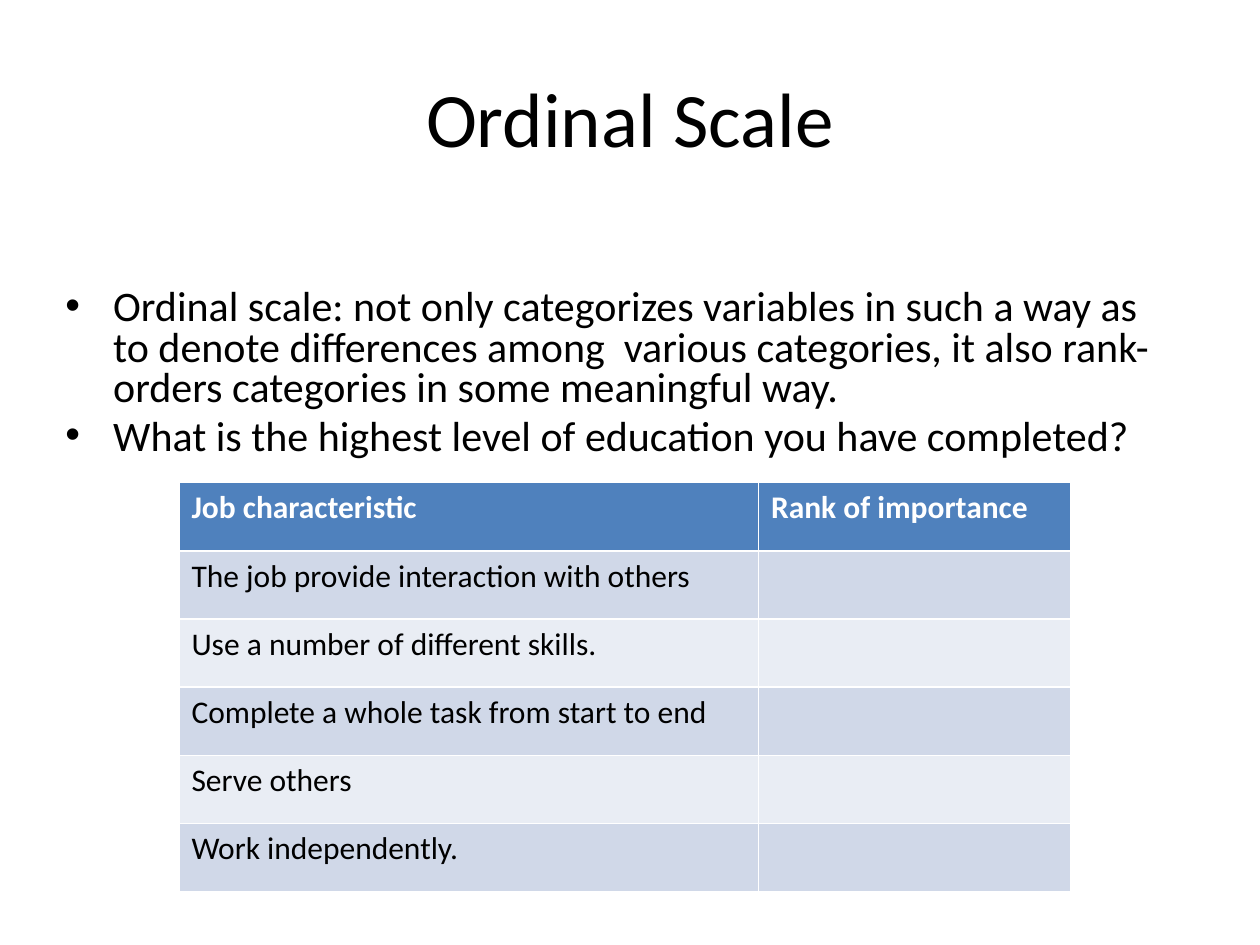
from lxml.etree import SubElement
from pptx import Presentation
from pptx.dml.color import RGBColor
from pptx.enum.text import MSO_ANCHOR, PP_ALIGN
from pptx.oxml.ns import qn
from pptx.util import Inches, Pt

BLACK = RGBColor(0x00, 0x00, 0x00)
WHITE = RGBColor(0xFF, 0xFF, 0xFF)
HEADER_BLUE = RGBColor(0x4F, 0x81, 0xBD)
BAND_DARK = RGBColor(0xD0, 0xD8, 0xE8)
BAND_LIGHT = RGBColor(0xE9, 0xED, 0xF4)

BULLETS = [
    "Ordinal scale: not only categorizes variables in such a way as to denote "
    "differences among  various categories, it also rank-orders categories in "
    "some meaningful way.",
    "What is the highest level of education you have completed?",
]
ROWS = [
    ("Job characteristic", "Rank of importance"),
    ("The job provide interaction with others", ""),
    ("Use a number of different skills.", ""),
    ("Complete a whole task from start to end", ""),
    ("Serve others", ""),
    ("Work independently.", ""),
]
COLUMN_WIDTHS = [4.6, 2.48]


def format_font(font, size, color, bold=False):
    for name, value in {"name": "Calibri", "size": Pt(size), "bold": bold}.items():
        setattr(font, name, value)
    font.color.rgb = color


def add_text(slide, left, top, width, height, anchor):
    box = slide.shapes.add_textbox(Inches(left), Inches(top), Inches(width), Inches(height))
    for name, value in {"word_wrap": True, "vertical_anchor": anchor}.items():
        setattr(box.text_frame, name, value)
    return box.text_frame


presentation = Presentation()
presentation.slide_width = Inches(10)
presentation.slide_height = Inches(7.5)
slide = presentation.slides.add_slide(presentation.slide_layouts[6])

title = add_text(slide, 0.5, 0.3, 9, 1.25, MSO_ANCHOR.MIDDLE)
title.text = "Ordinal Scale"
title.paragraphs[0].alignment = PP_ALIGN.CENTER
format_font(title.paragraphs[0].runs[0].font, 44, BLACK)

body = add_text(slide, 0.42, 2.25, 9, 4.95, MSO_ANCHOR.TOP)
body.text = "\n".join(BULLETS)
for paragraph in body.paragraphs:
    for name, value in {"line_spacing": 0.8, "space_before": Pt(4.8)}.items():
        setattr(paragraph, name, value)
    format_font(paragraph.runs[0].font, 24, BLACK)
    properties = paragraph._p.get_or_add_pPr()
    properties.set("marL", str(Inches(0.38)))
    properties.set("indent", str(Inches(-0.38)))
    SubElement(properties, qn("a:buFont"), typeface="Arial")
    SubElement(properties, qn("a:buChar"), char="•")

table = slide.shapes.add_table(
    len(ROWS), len(COLUMN_WIDTHS), Inches(1.42), Inches(3.83), Inches(7.08), Inches(3.25)
).table
for column, width in zip(table.columns, COLUMN_WIDTHS):
    column.width = Inches(width)

for row_index, row in enumerate(ROWS):
    is_header = row_index == 0
    band = BAND_DARK if row_index % 2 else BAND_LIGHT
    for column_index, text in enumerate(row):
        cell = table.cell(row_index, column_index)
        cell.fill.solid()
        cell.fill.fore_color.rgb = HEADER_BLUE if is_header else band
        cell.text = text
        format_font(
            cell.text_frame.paragraphs[0].font, 18, WHITE if is_header else BLACK, is_header
        )
        for run in cell.text_frame.paragraphs[0].runs:
            format_font(run.font, 18, WHITE if is_header else BLACK, is_header)

presentation.save("out.pptx")
